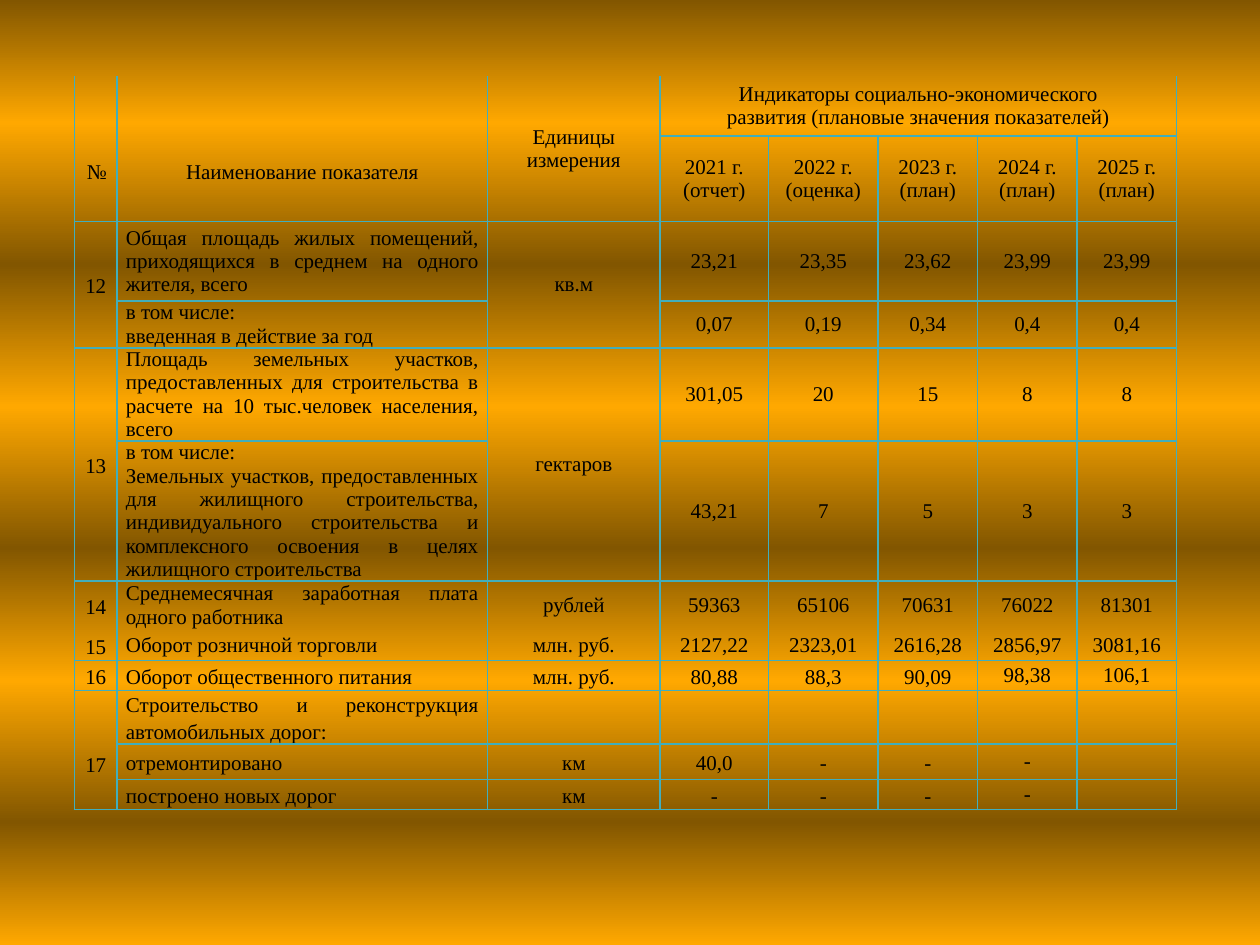
from lxml import etree
from pptx import Presentation
from pptx.dml.color import RGBColor
from pptx.enum.text import MSO_ANCHOR, PP_ALIGN
from pptx.oxml import parse_xml
from pptx.oxml.ns import nsdecls, qn
from pptx.util import Inches, Pt

CENTER, JUSTIFY = PP_ALIGN.CENTER, PP_ALIGN.JUSTIFY
MIDDLE = MSO_ANCHOR.MIDDLE
COLORS = {"dark": "825600", "bright": "FFA800", "border": "41AEBD", "text": "000000"}
FONT, SIZE = "Times New Roman", 12

prs = Presentation()
prs.slide_width, prs.slide_height = Inches(10), Inches(7.5)
s = prs.slides.add_slide(prs.slide_layouts[6])

# Background: alternating dark and bright bands from top to bottom
fill = s.background.fill
fill.gradient()
fill.gradient_angle = 270
stops = s.background._cSld.find(".//" + qn("a:gsLst"))
for old in list(stops):
    stops.remove(old)
for i, pos in enumerate([0, 13, 28, 43, 58, 72, 87, 100]):
    gs = etree.SubElement(stops, qn("a:gs"), pos=str(pos * 1000))
    etree.SubElement(gs, qn("a:srgbClr"), val=COLORS["bright" if i % 2 else "dark"])

# Table content; None marks a cell covered by a merge, "\n" a new paragraph
rows = [
    ["№", "Наименование показателя", "Единицы\nизмерения",
     "Индикаторы социально-экономического\nразвития (плановые значения показателей)",
     None, None, None, None],
    [None, None, None, "2021 г. (отчет)", "2022 г. (оценка)", "2023 г. (план)",
     "2024 г. (план)", "2025 г. (план)"],
    ["12", "Общая площадь жилых помещений, приходящихся в среднем на одного жителя, всего",
     "кв.м", "23,21", "23,35", "23,62", "23,99", "23,99"],
    [None, "в том числе:\nвведенная в действие за год", None,
     "0,07", "0,19", "0,34", "0,4", "0,4"],
    ["13", "Площадь земельных участков, предоставленных для строительства в расчете "
     "на 10 тыс.человек населения, всего", "гектаров", "301,05", "20", "15", "8", "8"],
    [None, "в том числе:\nЗемельных участков, предоставленных для жилищного строительства, "
     "индивидуального строительства и комплексного освоения в целях жилищного строительства",
     None, "43,21", "7", "5", "3", "3"],
    ["14", "Среднемесячная заработная плата одного работника", "рублей",
     "59363", "65106", "70631", "76022", "81301"],
    ["15", "Оборот розничной торговли", "млн. руб.",
     "2127,22", "2323,01", "2616,28", "2856,97", "3081,16"],
    ["16", "Оборот общественного питания", "млн. руб.",
     "80,88", "88,3", "90,09", "98,38", "106,1"],
    ["17", "Строительство и реконструкция автомобильных дорог:", "", "", "", "", "", ""],
    [None, "отремонтировано", "км", "40,0", "-", "-", "-", ""],
    [None, "построено новых дорог", "км", "-", "-", "-", "-", ""],
]
widths = [0.34, 2.94, 1.37, 0.86, 0.87, 0.79, 0.79, 0.79]
heights = [0.48, 0.68, 0.63, 0.37, 0.74, 1.1, 0.39, 0.24, 0.24, 0.42, 0.28, 0.24]
merges = [(0, 0, 1, 0), (0, 1, 1, 1), (0, 2, 1, 2), (0, 3, 0, 7), (2, 0, 3, 0),
          (2, 2, 3, 2), (4, 0, 5, 0), (4, 2, 5, 2), (9, 0, 11, 0)]
HEADER_ROWS, SPACED_FROM = 2, 8
top_margins = {(0, 0): 0.42, (0, 1): 0.42, (9, 0): 0.22}
open_below = 6  # no rule between rows 14 and 15

frame = s.shapes.add_table(len(rows), len(widths), Inches(0.59), Inches(0.6),
                           Inches(sum(widths)), Inches(sum(heights)))
table = frame.table
table.first_row = table.horz_banding = False
for col, width in zip(table.columns, widths):
    col.width = Inches(width)
for row, height in zip(table.rows, heights):
    row.height = Inches(height)
for r1, c1, r2, c2 in merges:
    table.cell(r1, c1).merge(table.cell(r2, c2))


def set_borders(cell, hidden):
    tc_pr = cell._tc.get_or_add_tcPr()
    for i, side in enumerate(["L", "R", "T", "B"]):
        paint = ("<a:noFill/>" if side in hidden else
                 f'<a:solidFill><a:srgbClr val="{COLORS["border"]}"/></a:solidFill>')
        tc_pr.insert(i, parse_xml(
            f'<a:ln{side} {nsdecls("a")} w="{Pt(1)}">{paint}</a:ln{side}>'))


# Cells
for i, texts in enumerate(rows):
    for j, text in enumerate(texts):
        cell = table.cell(i, j)
        cell.fill.background()
        hidden = {"T"} if i in (0, open_below + 1) else {"B"} if i == open_below else set()
        set_borders(cell, hidden)
        if text is None:
            continue
        cell.vertical_anchor = MIDDLE
        header = i < HEADER_ROWS
        side, edge = (0.1, 0.05) if header else (0.07, 0)
        if i in (4, 5) and j > 2:
            side = 0.01
        cell.margin_left = cell.margin_right = Inches(side)
        cell.margin_top = Inches(top_margins.get((i, j), edge))
        cell.margin_bottom = Inches(edge)
        tf = cell.text_frame
        for k, line in enumerate(text.split("\n")):
            p = tf.add_paragraph() if k else tf.paragraphs[0]
            p.alignment = JUSTIFY if j == 1 and not header else CENTER
            if not header and (j == 0 or i >= SPACED_FROM and j < 6):
                p.line_spacing = 1.15
            if not line:
                etree.SubElement(p._p, qn("a:endParaRPr"), sz=str(SIZE * 100))
                continue
            r = p.add_run()
            r.text = line
            r.font.name, r.font.size = FONT, Pt(SIZE)
            r.font.color.rgb = RGBColor.from_string(COLORS["text"])

prs.save("out.pptx")
